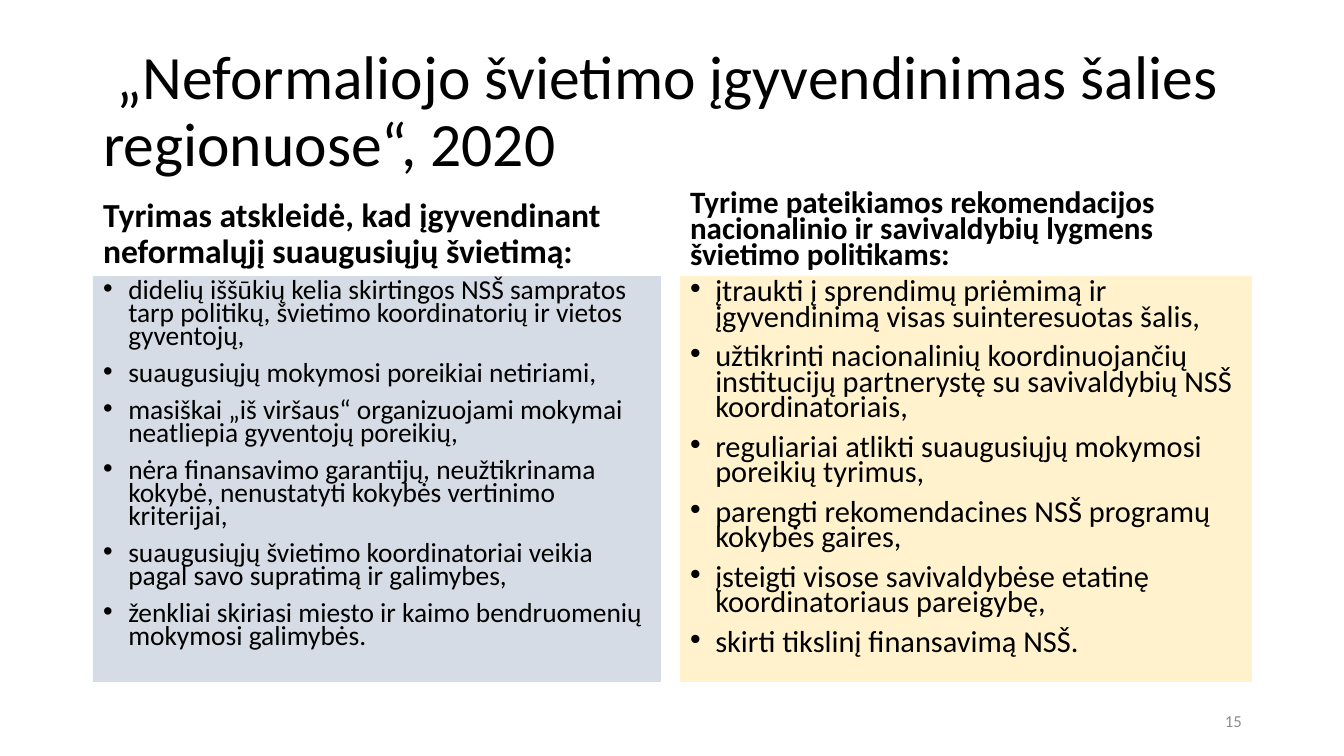
import dataclasses
import typing

import lxml.etree
import pptx
import pptx.dml.color
import pptx.enum.text
import pptx.oxml.ns
import pptx.util

ANCHOR = pptx.enum.text.MSO_ANCHOR
ALIGN = pptx.enum.text.PP_ALIGN
PX = 914400 / 100.8
FONT = "Calibri"
COLORS = {
    "text": "000000",
    "number": "8C8C8C",
    "findings": "D6DCE5",
    "advice": "FFF2CC",
}


class Box(typing.NamedTuple):
    left: int
    top: int
    width: int
    height: int


@dataclasses.dataclass
class Style:
    size: float
    spacing: float = 1.0
    before: int = 0
    bold: bool = False
    color: str = "text"
    align: ALIGN = ALIGN.LEFT
    anchor: ANCHOR = ANCHOR.MIDDLE


@dataclasses.dataclass
class Column:
    left: int
    width: int
    fill: str
    heading: str
    heading_style: Style
    items: list[str]
    item_size: float
    first_placeholder: int


COLUMNS = [
    Column(
        93, 568, "findings",
        "Tyrimas atskleidė, kad įgyvendinant neformalųjį suaugusiųjų švietimą:",
        Style(24, 0.9, 10, bold=True, anchor=ANCHOR.BOTTOM),
        [
            "didelių iššūkių kelia skirtingos NSŠ sampratos tarp politikų, "
            "švietimo koordinatorių ir vietos gyventojų,",
            "suaugusiųjų mokymosi poreikiai netiriami,",
            "masiškai „iš viršaus“ organizuojami mokymai neatliepia gyventojų poreikių,",
            "nėra finansavimo garantijų, neužtikrinama kokybė, "
            "nenustatyti kokybės vertinimo kriterijai,",
            "suaugusiųjų švietimo koordinatoriai veikia pagal savo supratimą ir galimybes,",
            "ženkliai skiriasi miesto ir kaimo bendruomenių mokymosi galimybės.",
        ],
        19.6, 1,
    ),
    Column(
        680, 572, "advice",
        "Tyrime pateikiamos rekomendacijos nacionalinio ir savivaldybių "
        "lygmens švietimo politikams:",
        Style(22.2, 0.7, 10, bold=True, anchor=ANCHOR.BOTTOM),
        [
            "įtraukti į sprendimų priėmimą ir įgyvendinimą visas suinteresuotas šalis,",
            "užtikrinti nacionalinių koordinuojančių institucijų partnerystę "
            "su savivaldybių NSŠ koordinatoriais,",
            "reguliariai atlikti suaugusiųjų mokymosi poreikių tyrimus,",
            "parengti rekomendacines NSŠ programų kokybės gaires,",
            "įsteigti visose savivaldybėse etatinę koordinatoriaus pareigybę,",
            "skirti tikslinį finansavimą NSŠ.",
        ],
        21.7, 3,
    ),
]


def px(n: int) -> int:
    return round(n * PX)


def rgb(name: str) -> pptx.dml.color.RGBColor:
    return pptx.dml.color.RGBColor.from_string(COLORS[name])


def place(sp: typing.Any, box: Box) -> None:
    sp.left, sp.top, sp.width, sp.height = map(px, box)


def write(sp: typing.Any, lines: list[str], style: Style) -> None:
    tf = sp.text_frame
    tf.text = "\n".join(lines)
    tf.word_wrap = True
    tf.auto_size = pptx.enum.text.MSO_AUTO_SIZE.NONE
    tf.vertical_anchor = style.anchor
    for p in tf.paragraphs:
        p.alignment = style.align
        p.line_spacing = style.spacing
        p.space_before = pptx.util.Pt(style.before)
        for r in p.runs:
            r.font.name = FONT
            r.font.size = pptx.util.Pt(style.size)
            r.font.bold = style.bold
            r.font.color.rgb = rgb(style.color)


def add_bullets(sp: typing.Any) -> None:
    indent = pptx.util.Inches(0.25)
    qn = pptx.oxml.ns.qn
    for p in sp.text_frame.paragraphs:
        pPr = p._p.get_or_add_pPr()
        pPr.set("marL", str(indent))
        pPr.set("indent", str(-indent))
        lxml.etree.SubElement(pPr, qn("a:buFont")).set("typeface", "Arial")
        lxml.etree.SubElement(pPr, qn("a:buChar")).set("char", "•")


def draw_column(s: typing.Any, col: Column) -> None:
    heading = s.placeholders[col.first_placeholder]
    place(heading, Box(col.left, 185, col.width, 91))
    write(heading, [col.heading], col.heading_style)

    body = s.placeholders[col.first_placeholder + 1]
    place(body, Box(col.left, 276, col.width, 406))
    body.fill.solid()
    body.fill.fore_color.rgb = rgb(col.fill)
    write(body, col.items, Style(col.item_size, 0.7, 10, anchor=ANCHOR.TOP))
    add_bullets(body)


def main() -> None:
    prs = pptx.Presentation()
    prs.slide_width, prs.slide_height = px(1344), px(756)
    s = prs.slides.add_slide(prs.slide_layouts.get_by_name("Comparison"))

    # Title
    title = s.shapes.title
    place(title, Box(93, 40, 1159, 146))
    write(title, [" „Neformaliojo švietimo įgyvendinimas šalies regionuose“, 2020"],
          Style(44, 0.9))

    # Findings and recommendations
    for col in COLUMNS:
        draw_column(s, col)

    # Slide number
    number = s.shapes.add_textbox(*map(px, Box(950, 701, 302, 40)))
    write(number, ["15"], Style(12, color="number", align=ALIGN.RIGHT))

    prs.save("out.pptx")


if __name__ == "__main__":
    main()
